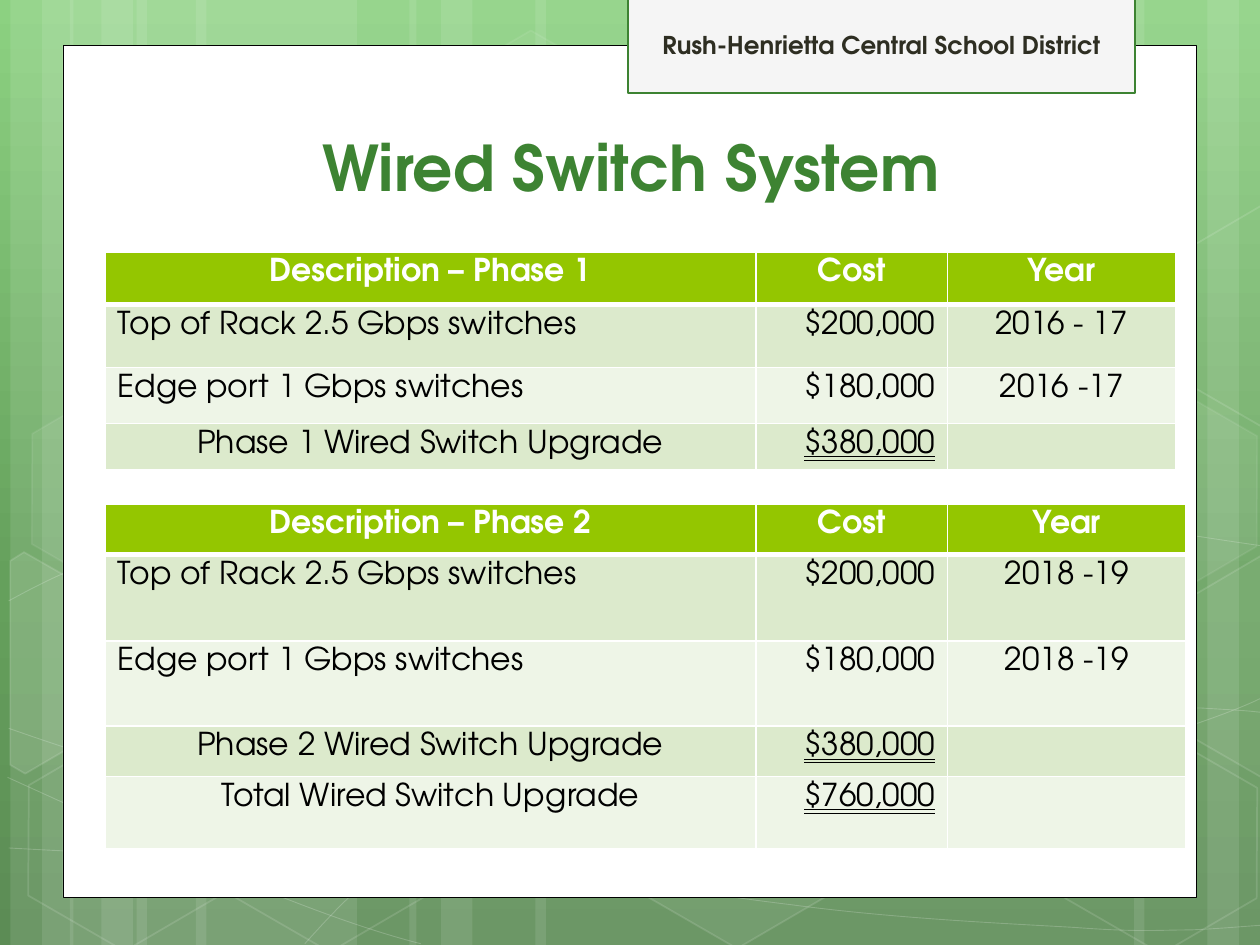
"""Builds the wired switch system cost slide."""
from dataclasses import dataclass
from math import cos, radians, sin
from typing import Optional

from lxml.etree import SubElement
from pptx import Presentation
from pptx.dml.color import RGBColor
from pptx.enum.shapes import MSO_SHAPE as Preset
from pptx.enum.text import MSO_ANCHOR as Anchor, MSO_AUTO_SIZE as AutoSize
from pptx.enum.text import MSO_UNDERLINE as Underline, PP_ALIGN as Align
from pptx.oxml.ns import qn
from pptx.util import Pt

FONT = "TeX Gyre Adventor"
TILT = 30
WHITE = RGBColor(0xFF, 0xFF, 0xFF)
BLACK = RGBColor(0, 0, 0)
GREEN = RGBColor(0x3D, 0x83, 0x32)
LABEL_FILL = RGBColor(0xF5, 0xF5, 0xF5)
LABEL_TEXT = RGBColor(0x2E, 0x2E, 0x22)
HEADER_FILL = RGBColor(0x94, 0xC6, 0x00)
BAND_FILLS = (RGBColor(0xDC, 0xEA, 0xCC), RGBColor(0xEE, 0xF5, 0xE7))
BACKDROP = ((0, "8CD181"), (62, "65A05C"), (100, "5C8C55"))


@dataclass
class Hexagon:
    left: float
    top: float
    fill_opacity: int
    line_opacity: int


@dataclass
class Outline:
    center: tuple
    points: list
    fill_opacity: int


@dataclass
class CostTable:
    top: float
    widths: tuple
    heights: tuple
    rows: list


BARS = ((78, 126), (6, 36), (24, 60), (112, 126), (40, 36), (58, 60), (528, 126),
        (690, 36), (648, 60), (306, 222), (234, 36), (252, 60))

CURVES = (
    ((5, 484.6), (44, 486.7, 83, 489, 136.8, 488.2), (191, 487.4, 258, 486, 329.8, 478.8),
     (402, 471.6, 504, 458, 570.2, 444.2), (636, 430.6, 703, 409, 725, 396.7)),
    ((5, 343.4), (26, 332, 47, 321, 87, 310.3), (128, 299.5, 186.5, 283.7, 250, 278.6),
     (314, 273.6, 391.7, 273, 471, 278.6), (550, 284.4, 682, 306.7, 725, 312.5)),
    ((4.3, 444.2), (91.4, 483.8, 177.8, 523.4, 240.5, 539.3)),
    ((5, 416.2), (27.4, 424, 50.4, 432, 92.2, 443.5), (134, 454.3, 196.6, 472.3, 257, 484.6),
     (316.8, 496.8, 392.4, 509.8, 452.2, 517), (512, 525, 576, 527.8, 614.2, 530),
     (651.6, 532.8, 661.7, 531.4, 680.4, 531.4), (699, 530.6, 712, 529.2, 725, 528.5)),
    ((174.2, 539.3), (187.2, 525, 200.2, 510.5, 217.4, 497.5),
     (234.7, 484.6, 259.2, 470.2, 279.4, 460), (299.5, 450, 311.8, 445.7, 338.4, 438.5),
     (364.3, 431.3, 412.6, 421.2, 437.8, 416.2), (463.7, 411, 467.3, 411, 489.6, 409.7),
     (512, 407.5, 547.2, 405.4, 571.7, 404.6), (597, 404, 638, 404.6, 638, 404.6),
     (686.2, 404.6), (699, 405.4, 711.4, 406, 717.8, 406.8),
     (724.3, 407.5, 722.2, 406.8, 724.3, 407.5)),
)

HEXAGONS = (
    Hexagon(240.5, 26, 4, 8), Hexagon(358, 424, 6, 12), Hexagon(8, 425.5, 0, 12),
    Hexagon(10, 224.6, 7, 8), Hexagon(125.3, 426, 0, 12), Hexagon(600.5, 427, 0, 12),
    Hexagon(600.5, 226, 7, 8),
)

OUTLINES = (
    Outline((25.9, 385.2), [(5.8, 320.4), (13.7, 315.4), (69, 347), (68.4, 410.4),
                            (14.4, 442), (5.8, 437)], 10),
    Outline((709.2, 374.4), [(666.7, 349.2), (720.7, 317.5), (726.5, 321), (726.5, 441.4),
                             (721.4, 444.2), (666.7, 412.6)], 4),
    Outline((709.2, 173.5), [(666.7, 149), (720.7, 117.4), (727, 121), (726.5, 241.2),
                             (721.4, 244), (666.7, 212.4)], 0),
)


def phase_rows(phase: int, years: tuple) -> list:
    return [
        (f"Description – Phase {phase}", "Cost", "Year"),
        ("Top of Rack 2.5 Gbps switches", "$200,000", years[0]),
        ("Edge port 1 Gbps switches", "$180,000", years[1]),
        (f"Phase {phase} Wired Switch Upgrade", "$380,000", ""),
    ]


TABLES = (
    CostTable(144, (372, 109.5, 130.3), (30, 36, 32, 26.6),
              phase_rows(1, ("2016 - 17", "2016 -17"))),
    CostTable(288, (372, 109.5, 136.3), (28.8, 49.5, 48.5, 29, 41),
              phase_rows(2, ("2018 -19", "2018 -19"))
              + [("Total Wired Switch Upgrade", "$760,000", "")]),
)


def set_opacity(parent, percent: int) -> None:
    SubElement(parent.find(qn("a:solidFill"))[0], qn("a:alpha"), val=str(percent * 1000))


def paint(shape, fill: Optional[RGBColor], line: Optional[RGBColor], width: float = 0,
          fill_opacity: int = 100, line_opacity: int = 100) -> None:
    shape.shadow.inherit = False
    properties = shape.element.spPr
    if fill is None or fill_opacity == 0:
        shape.fill.background()
    else:
        shape.fill.solid()
        shape.fill.fore_color.rgb = fill
        if fill_opacity < 100:
            set_opacity(properties, fill_opacity)
    if line is None:
        shape.line.fill.background()
        return
    shape.line.color.rgb = line
    shape.line.width = Pt(width)
    if line_opacity < 100:
        set_opacity(properties.find(qn("a:ln")), line_opacity)


def add_box(page, preset, left: float, top: float, width: float, height: float):
    return page.shapes.add_shape(preset, Pt(left), Pt(top), Pt(width), Pt(height))


def add_path(page, points: list, close: bool):
    corners = [(Pt(x), Pt(y)) for x, y in points]
    builder = page.shapes.build_freeform(*corners[0])
    builder.add_line_segments(corners[1:], close=close)
    return builder.convert_to_shape()


def add_curve(page, curve: tuple):
    shape = add_path(page, [knot[-2:] for knot in curve], False)
    segments = shape.element.spPr.findall(".//" + qn("a:lnTo"))
    for segment, knot in zip(segments, curve[1:]):
        if len(knot) == 6:
            segment.tag = qn("a:cubicBezTo")
            handles = ((knot[0], knot[1]), (knot[2], knot[3]))
            for index, (x, y) in enumerate(handles):
                point = SubElement(segment, qn("a:pt"), x=str(Pt(x) - shape.left),
                                   y=str(Pt(y) - shape.top))
                segment.insert(index, point)
    return shape


def turn(point: tuple, center: tuple, degrees: float) -> tuple:
    angle = radians(degrees)
    x, y = point[0] - center[0], point[1] - center[1]
    return (center[0] + x * cos(angle) - y * sin(angle),
            center[1] + x * sin(angle) + y * cos(angle))


def write(frame, text: str, size: float, color: RGBColor, bold: bool, align) -> None:
    frame.text = text
    para = frame.paragraphs[0]
    para.alignment = align
    for font in [para.font] + [span.font for span in para.runs]:
        font.name, font.size, font.bold = FONT, Pt(size), bold
        font.color.rgb = color


def draw_backdrop(page) -> None:
    fill = page.background.fill
    fill.gradient()
    fill.gradient_angle = 270
    stops = page.element.find(".//" + qn("a:gsLst"))
    for stop in list(stops):
        stops.remove(stop)
    for position, color in BACKDROP:
        stop = SubElement(stops, qn("a:gs"), pos=str(position * 1000))
        SubElement(stop, qn("a:srgbClr"), val=color)
    for left, width in BARS:
        paint(add_box(page, Preset.RECTANGLE, left, 0, width, 540), WHITE, None, fill_opacity=10)
    for curve in CURVES:
        paint(add_curve(page, curve), None, WHITE, 0.5, line_opacity=20)
    for item in HEXAGONS:
        hexagon = add_box(page, Preset.HEXAGON, item.left, item.top, 126, 109.5)
        hexagon.adjustments[0] = 0.285
        hexagon.rotation = TILT
        paint(hexagon, WHITE, WHITE, 1, item.fill_opacity, item.line_opacity)
    for item in OUTLINES:
        upright = [turn(point, item.center, -TILT) for point in item.points]
        outline = add_path(page, upright, True)
        outline.rotation = TILT
        paint(outline, WHITE, WHITE, 1, item.fill_opacity, 12)


def set_borders(cell, top: float, bottom: float) -> None:
    properties = cell._tc.get_or_add_tcPr()
    for index, (side, width) in enumerate((("L", 1), ("R", 1), ("T", top), ("B", bottom))):
        border = SubElement(properties, qn(f"a:ln{side}"), w=str(Pt(width)))
        SubElement(SubElement(border, qn("a:solidFill")), qn("a:srgbClr"), val=str(WHITE))
        properties.insert(index, border)


def draw_table(page, spec: CostTable) -> None:
    table = page.shapes.add_table(len(spec.rows), len(spec.widths), Pt(60), Pt(spec.top),
                                  Pt(sum(spec.widths)), Pt(sum(spec.heights))).table
    for column, width in zip(table.columns, spec.widths):
        column.width = Pt(width)
    for r, (height, texts) in enumerate(zip(spec.heights, spec.rows)):
        table.rows[r].height = Pt(height)
        header, total = r == 0, r >= 3
        aligns = (Align.CENTER if header or total else Align.LEFT,
                  Align.CENTER if header else Align.RIGHT, Align.CENTER)
        for c, text in enumerate(texts):
            cell = table.cell(r, c)
            cell.fill.solid()
            cell.fill.fore_color.rgb = HEADER_FILL if header else BAND_FILLS[(r - 1) % 2]
            set_borders(cell, 3 if r == 1 else 1, 3 if header else 1)
            write(cell.text_frame, text, 18, WHITE if header else BLACK, header, aligns[c])
            if total and c == 1:
                cell.text_frame.paragraphs[0].runs[0].font.underline = Underline.DOUBLE_LINE


def main() -> None:
    deck = Presentation()
    deck.slide_width, deck.slide_height = Pt(720), Pt(540)
    page = deck.slides.add_slide(deck.slide_layouts[5])
    draw_backdrop(page)
    paint(add_box(page, Preset.RECTANGLE, 36, 26, 648, 487), WHITE, BLACK, 0.5)
    label = add_box(page, Preset.RECTANGLE, 359, -1.5, 289.5, 54.5)
    paint(label, LABEL_FILL, GREEN, 1.25)
    label.text_frame.vertical_anchor = Anchor.MIDDLE
    write(label.text_frame, "Rush-Henrietta Central School District", 14, LABEL_TEXT, True,
          Align.CENTER)
    title = page.shapes.title
    title.element.getparent().append(title.element)
    title.left, title.top, title.width, title.height = Pt(84), Pt(60), Pt(553), Pt(60)
    title.text_frame.auto_size = AutoSize.NONE
    title.text_frame.vertical_anchor = Anchor.BOTTOM
    write(title.text_frame, "Wired Switch System", 36, GREEN, True, Align.CENTER)
    for spec in TABLES:
        draw_table(page, spec)
    deck.save("out.pptx")


if __name__ == "__main__":
    main()
